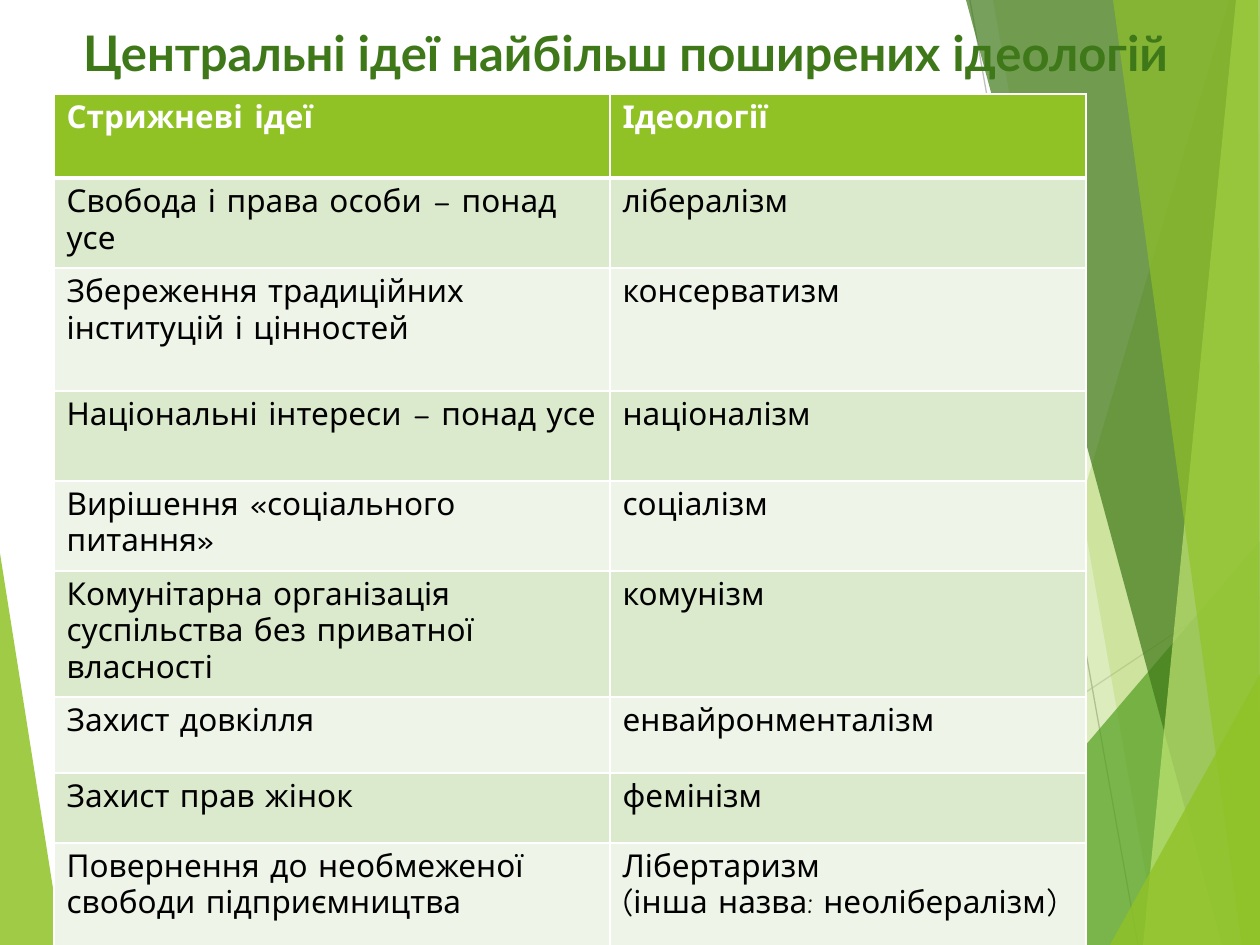
import lxml.etree
import pptx
import pptx.dml.color
import pptx.enum.shapes
import pptx.enum.text
import pptx.oxml.ns
import pptx.util

EMU_PER_PX = 914400 / 126
SLIDE_WIDTH, SLIDE_HEIGHT = 1260, 945

COLORS = {
    "green": "90C226",
    "leaf": "54A021",
    "dark": "3F7819",
    "lime": "C0E474",
    "band_odd": "DBE9CD",
    "band_even": "EEF4E8",
    "white": "FFFFFF",
    "black": "000000",
    "line_light": "D9D9D9",
    "line_gray": "BFBFBF",
}

# Each facet: outline points, colour, opacity in percent
LEFT_FACET = ([(0, 553), (62, 945), (0, 945)], "green", 85)
RIGHT_FACETS = [
    ([(279, 0), (0, 945), (310, 945), (310, 0)], "green", 30),
    ([(43, 0), (208, 945), (310, 945), (310, 0)], "green", 20),
    ([(-35, 945), (310, 541), (310, 945)], "leaf", 72),
    ([(16, 0), (272, 945), (310, 945), (310, 0)], "dark", 70),
    ([(286, 0), (193, 945), (310, 945), (310, 0)], "lime", 70),
    ([(163, 0), (292, 945), (310, 945), (308, 0)], "green", 65),
    ([(160, 945), (310, 674), (310, 945)], "green", 80),
]
# Each line: start, end, colour
RIGHT_LINES = [
    ((-243, 945), (310, 576), "line_light"),
    ((20, 0), (188, 945), "line_gray"),
]

TITLE = "Центральні ідеї найбільш поширених ідеологій"
# Each row: height, core idea, ideology
ROWS = [
    (84, "Стрижневі ідеї", "Ідеології"),
    (90, "Свобода і права особи – понад усе", "лібералізм"),
    (123, "Збереження традиційних інституцій і цінностей", "консерватизм"),
    (90, "Національні інтереси – понад усе", "націоналізм"),
    (90, "Вирішення «соціального питання»", "соціалізм"),
    (122, "Комунітарна організація суспільства без приватної власності", "комунізм"),
    (76, "Захист довкілля", "енвайронменталізм"),
    (70, "Захист прав жінок", "фемінізм"),
    (106, "Повернення до необмеженої свободи підприємництва",
     "Лібертаризм\n(інша назва: неолібералізм)"),
]


def px(length):
    return pptx.util.Emu(round(length * EMU_PER_PX))


def rgb(name):
    return pptx.dml.color.RGBColor.from_string(COLORS[name])


def set_font(paragraph, name, size, color, bold):
    font = paragraph.font
    font.name, font.size, font.bold = name, pptx.util.Pt(size), bold
    font.color.rgb = rgb(color)


def add_facet(slide, left, top, points, color, opacity):
    corners = [(px(left + x), px(top + y)) for x, y in points]
    builder = slide.shapes.build_freeform(*corners[0])
    builder.add_line_segments(corners[1:], close=True)
    shape = builder.convert_to_shape()
    shape.shadow.inherit = False
    shape.line.fill.background()
    shape.fill.solid()
    shape.fill.fore_color.rgb = rgb(color)
    color_element = shape.fill._xPr.find(".//" + pptx.oxml.ns.qn("a:srgbClr"))
    lxml.etree.SubElement(color_element, pptx.oxml.ns.qn("a:alpha"), val=str(opacity * 1000))


def add_line(slide, left, top, start, end, color):
    connector = slide.shapes.add_connector(
        pptx.enum.shapes.MSO_CONNECTOR.STRAIGHT,
        px(left + start[0]), px(top + start[1]), px(left + end[0]), px(top + end[1]))
    connector.line.color.rgb = rgb(color)
    connector.line.width = pptx.util.Pt(0.75)
    lxml.etree.SubElement(connector._element.spPr, pptx.oxml.ns.qn("a:effectLst"))


def add_left_decoration(slide, left, top):
    add_facet(slide, left, top, *LEFT_FACET)


def add_right_decoration(slide, left, top):
    for start, end, color in RIGHT_LINES:
        add_line(slide, left, top, start, end, color)
    for points, color, opacity in RIGHT_FACETS:
        add_facet(slide, left, top, points, color, opacity)


def add_title(slide, left, top, width, height):
    box = slide.shapes.add_textbox(px(left), px(top), px(width), px(height))
    box.text_frame.word_wrap = True
    paragraph = box.text_frame.paragraphs[0]
    paragraph.text = TITLE
    paragraph.alignment = pptx.enum.text.PP_ALIGN.CENTER
    set_font(paragraph, "Lato", 28, "dark", True)


def set_borders(cell, widths):
    properties = cell._tc.get_or_add_tcPr()
    for side, width in widths.items():
        border = lxml.etree.SubElement(
            properties, pptx.oxml.ns.qn("a:ln" + side), w=str(pptx.util.Pt(width)))
        fill = lxml.etree.SubElement(border, pptx.oxml.ns.qn("a:solidFill"))
        lxml.etree.SubElement(fill, pptx.oxml.ns.qn("a:srgbClr"), val=COLORS["white"])


def add_ideology_table(slide, left, top, width, height):
    table = slide.shapes.add_table(
        len(ROWS), 2, px(left), px(top), px(width), px(height)).table
    idea_width = 556
    table.columns[0].width = px(idea_width)
    table.columns[1].width = px(width - idea_width)
    for row_index, (row_height, *texts) in enumerate(ROWS):
        table.rows[row_index].height = px(row_height)
        header = row_index == 0
        band = "band_odd" if row_index % 2 else "band_even"
        for column_index, text in enumerate(texts):
            cell = table.cell(row_index, column_index)
            set_borders(cell, {"L": 1, "R": 1, "T": 3 if row_index == 1 else 1,
                               "B": 3 if header else 1})
            cell.fill.solid()
            cell.fill.fore_color.rgb = rgb("green" if header else band)
            cell.text = text
            for paragraph in cell.text_frame.paragraphs:
                set_font(paragraph, "Comic Neue", 18, "white" if header else "black", header)


def main():
    presentation = pptx.Presentation()
    presentation.slide_width = px(SLIDE_WIDTH)
    presentation.slide_height = px(SLIDE_HEIGHT)
    slide = presentation.slides.add_slide(presentation.slide_layouts[6])

    # Background facets
    add_left_decoration(slide, 0, 0)
    add_right_decoration(slide, 950, 0)

    # Content
    add_title(slide, 35, 16, 1181, 89)
    add_ideology_table(slide, 54, 94, 1032, 851)

    presentation.save("out.pptx")


if __name__ == "__main__":
    main()
